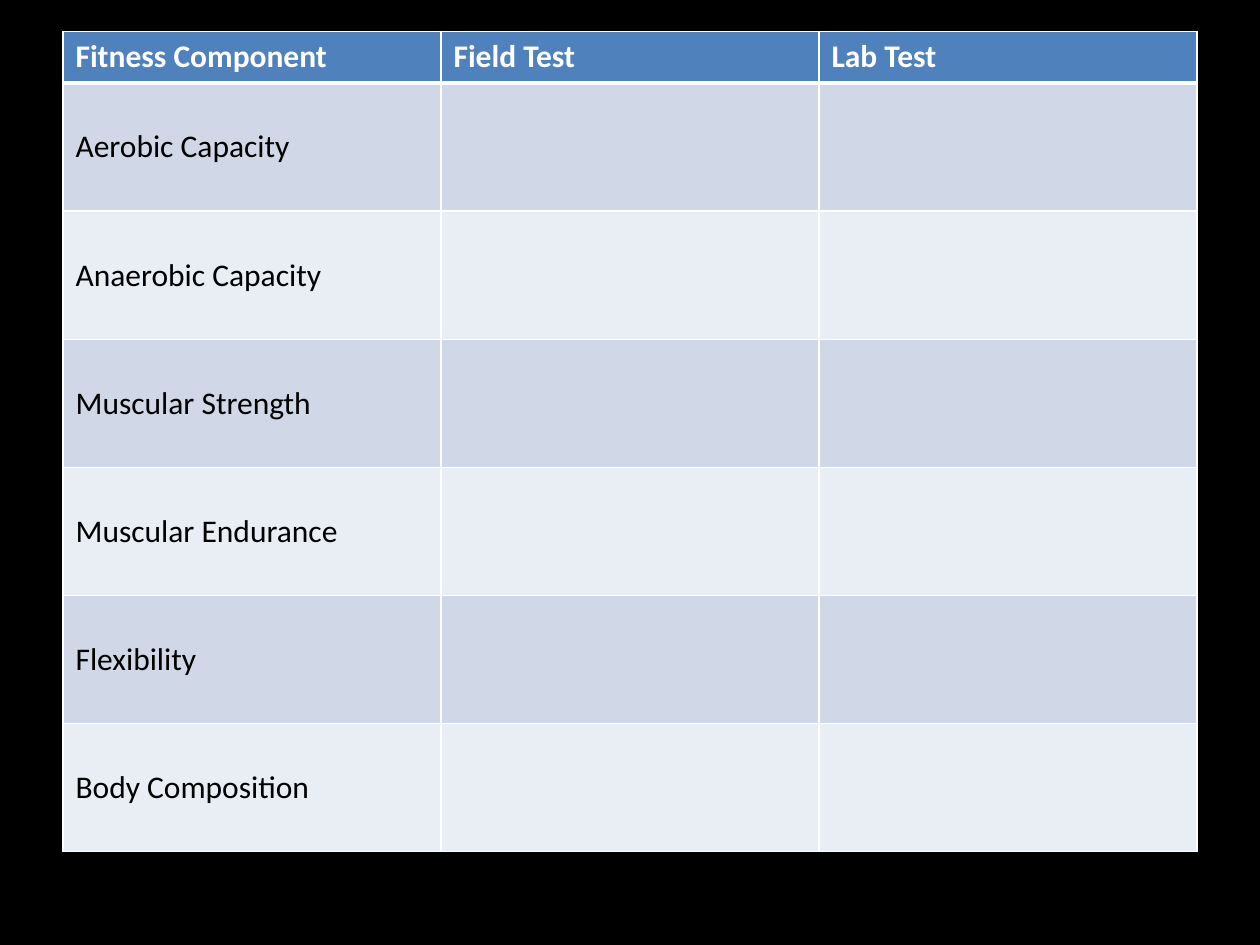
from lxml import etree
from pptx import Presentation
from pptx.dml.color import RGBColor
from pptx.enum import text as t
from pptx.oxml import ns
from pptx.util import Inches, Pt

HEADS = ["Fitness Component", "Field Test", "Lab Test"]
PARTS = ["Aerobic Capacity", "Anaerobic Capacity", "Muscular Strength",
         "Muscular Endurance", "Flexibility", "Body Composition"]


def paint(fill, color):
    fill.solid()
    fill.fore_color.rgb = RGBColor.from_string(color)


def write(frame, words, font="Calibri", size=18, color="000000", bold=False):
    run = frame.paragraphs[0].add_run()
    run.text = words
    run.font.name = font
    run.font.size = Pt(size)
    run.font.bold = bold
    run.font.color.rgb = RGBColor.from_string(color)


class Deck:
    back, head, line = "000000", "4F81BD", "FFFFFF"
    bands = ["D0D8E8", "E9EDF4"]

    def __init__(self):
        self.file = Presentation()
        self.file.slide_width = Inches(10)
        self.file.slide_height = Inches(7.5)
        self.slide = self.file.slides.add_slide(self.file.slide_layouts[6])
        paint(self.slide.background.fill, self.back)

    def border(self, cell, side, width):
        props = cell._tc.get_or_add_tcPr()
        edge = etree.SubElement(props, ns.qn(f"a:ln{side}"), w=str(Pt(width)))
        fill = etree.SubElement(edge, ns.qn("a:solidFill"))
        etree.SubElement(fill, ns.qn("a:srgbClr"), val=self.line)

    def cell(self, cell, words, row):
        top = row == 0
        for side in "LRTB":
            thick = (top and side == "B") or (row == 1 and side == "T")
            self.border(cell, side, 3 if thick else 1)
        paint(cell.fill, self.head if top else self.bands[(row - 1) % 2])
        cell.vertical_anchor = t.MSO_ANCHOR.TOP if top else t.MSO_ANCHOR.MIDDLE
        if words:
            write(cell.text_frame, words, bold=top,
                  color=self.line if top else "000000")

    def table(self, rows, left, top, width, first, rest):
        count = len(rows[0])
        height = first + rest * (len(rows) - 1)
        grid = self.slide.shapes.add_table(
            len(rows), count, Inches(left), Inches(top),
            Inches(width), Inches(height)).table
        for col in grid.columns:
            col.width = Inches(width / count)
        for i, row in enumerate(rows):
            grid.rows[i].height = Inches(rest if i else first)
            for j, words in enumerate(row):
                self.cell(grid.cell(i, j), words, i)


def main():
    deck = Deck()
    rows = [HEADS] + [[part, "", ""] for part in PARTS]
    deck.table(rows, 0.5, 0.25, 9, first=0.41, rest=6.1 / len(PARTS))
    deck.file.save("out.pptx")


if __name__ == "__main__":
    main()
